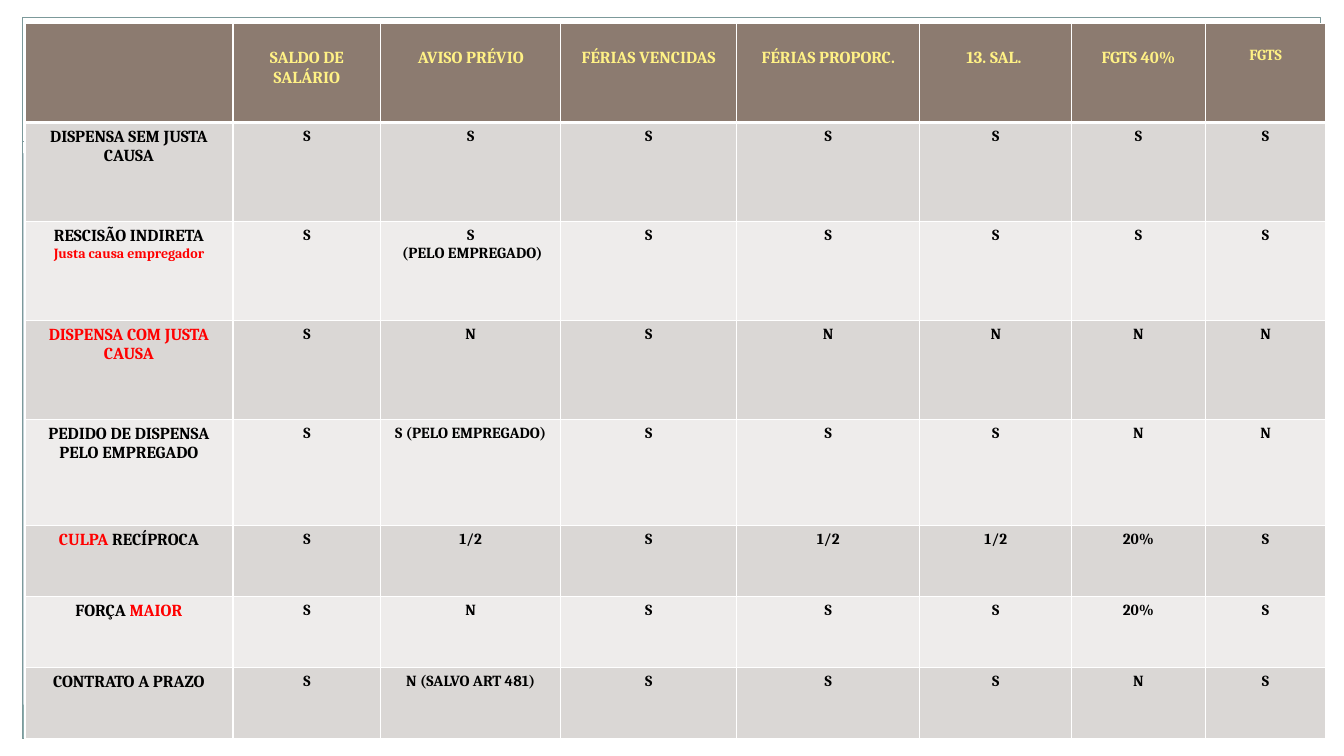
"""Build a slide with a table of severance rights by type of dismissal."""
from lxml.etree import SubElement
from pptx import Presentation
from pptx.dml.color import RGBColor
from pptx.enum.dml import MSO_LINE
from pptx.enum.shapes import MSO_CONNECTOR, MSO_SHAPE
from pptx.enum.text import PP_ALIGN
from pptx.oxml.ns import qn
from pptx.util import Pt


def paint(form, color):
    form.solid()
    form.fore_color.rgb = RGBColor.from_string(color)


def border(cell, side, width):
    line = SubElement(cell._tc.get_or_add_tcPr(), qn(f"a:ln{side}"), w=str(Pt(width)))
    fill = SubElement(line, qn("a:solidFill"))
    SubElement(fill, qn("a:srgbClr"), val="FFFFFF")


deck = Presentation()
deck.slide_width, deck.slide_height = Pt(960), Pt(540)
slide = deck.slides.add_slide(deck.slide_layouts[6])
paint(slide.background.fill, "C5D1D7")

bands = [
    (0, 527.76, 960, 12.24, "FFFFFF"),
    (0, 0, 960, 109.44, "FFFFFF"),
    (0, 0, 16, 540, "FFFFFF"),
    (944, 0, 16, 540, "FFFFFF"),
    (16, 503.28, 927.5, 24.48, "8CADAE"),
    (16, 12.24, 927.5, 515.52, None),
]
for *box, color in bands:
    band = slide.shapes.add_shape(MSO_SHAPE.RECTANGLE, *map(Pt, box))
    band.shadow.inherit = False
    if color:
        paint(band.fill, color)
        band.line.fill.background()
    else:
        band.fill.background()
        paint(band.line.fill, "7C999A")
        band.line.width = Pt(0.75)

rule = slide.shapes.add_connector(
    MSO_CONNECTOR.STRAIGHT, Pt(16), Pt(100.8), Pt(943.5), Pt(100.8))
paint(rule.line.fill, "7C999A")
rule.line.width = Pt(0.75)
rule.line.dash_style = MSO_LINE.SQUARE_DOT
SubElement(rule._element.spPr, qn("a:effectLst"))

# Asterisks enclose red words
rows = [
    ["", "SALDO DE SALÁRIO", "AVISO PRÉVIO", "FÉRIAS VENCIDAS",
     "FÉRIAS PROPORC.", "13. SAL. ", "FGTS 40%", "FGTS"],
    ["DISPENSA SEM JUSTA CAUSA", "S", "S", "S", "S", "S", "S", "S"],
    ["RESCISÃO INDIRETA\n*Justa causa empregador*", "S",
     "S\n (PELO EMPREGADO)", "S", "S", "S", "S", "S"],
    ["*DISPENSA COM JUSTA CAUSA*", "S", "N", "S", "N", "N", "N", "N"],
    ["PEDIDO DE DISPENSA PELO EMPREGADO", "S", "S (PELO EMPREGADO)",
     "S", "S", "S", "N", "N"],
    ["*CULPA* RECÍPROCA", "S", "1/2", "S", "1/2", "1/2", "20%", "S"],
    ["FORÇA *MAIOR*", "S", "N", "S", "S", "S", "20%", "S"],
    ["CONTRATO A PRAZO", "S", "N (SALVO ART 481)", "S", "S", "S", "N", "S"],
]
widths = [148.6, 105.7, 128.4, 125.8, 130.8, 108.6, 95.2, 86.4]
heights = [70.7] * 4 + [75.6] + [50.8] * 3
table = slide.shapes.add_table(
    len(rows), len(widths), Pt(17.8), Pt(16.8), Pt(sum(widths)), Pt(sum(heights))).table
for col, width in zip(table.columns, widths):
    col.width = Pt(width)
for row, height in zip(table.rows, heights):
    row.height = Pt(height)

for r, row in enumerate(rows):
    for c, text in enumerate(row):
        cell = table.cell(r, c)
        head = r == 0
        size = 12 if c == 0 or head and c < 7 else 11
        cell.margin_top = Pt(3.6 + (size * 1.2 if head else 0))
        for side in "LRTB":
            border(cell, side, 3 if head and side == "B" else 1)
        paint(cell.fill, "8C7B70" if head else "DAD7D5" if r % 2 else "EEECEB")
        frame = cell.text_frame
        for n, line in enumerate(text.split("\n")):
            para = frame.add_paragraph() if n else frame.paragraphs[0]
            para.alignment = PP_ALIGN.CENTER
            para.font.name = "Cambria"
            para.font.bold = True
            para.font.size = Pt(10 if n and c == 0 else size)
            for k, part in enumerate(line.split("*")):
                if part:
                    run = para.add_run()
                    run.text = part
                    paint(run.font.fill, "FFF185" if head else "FF0000" if k % 2 else "000000")

deck.save("out.pptx")
